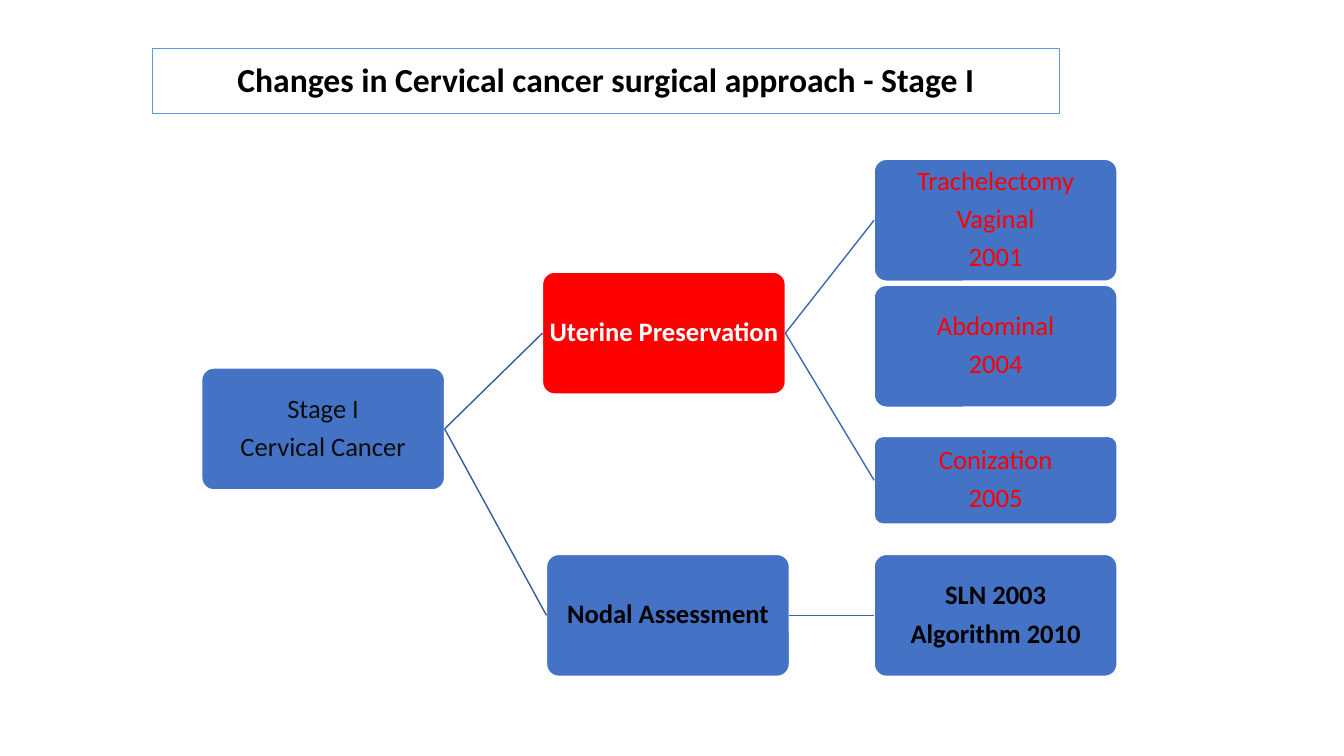
import pptx
import pptx.util
import pptx.dml.color
import pptx.enum.shapes
import pptx.enum.text
import pptx.oxml.ns
from lxml import etree
from pptx.util import Inches

BLUE, RED, WHITE, BLACK = "4472C4", "FF0000", "FFFFFF", "000000"


def color(value):
    return pptx.dml.color.RGBColor.from_string(value)


def write(frame, text, size=19, ink=BLACK, bold=False, after=0):
    """Fill a text frame with one centred paragraph per line of text."""
    frame.word_wrap = True
    frame.vertical_anchor = pptx.enum.text.MSO_ANCHOR.MIDDLE
    for index, line in enumerate(text.split("\n")):
        paragraph = frame.add_paragraph() if index else frame.paragraphs[0]
        paragraph.alignment = pptx.enum.text.PP_ALIGN.CENTER
        paragraph.line_spacing = 0.9
        paragraph.space_before = pptx.util.Pt(0)
        paragraph.space_after = pptx.util.Pt(after)
        run = paragraph.add_run()
        run.text = line
        run.font.name = "Calibri"
        run.font.size = pptx.util.Pt(size)
        run.font.bold = bold
        run.font.color.rgb = color(ink)


class TreeSlide:
    box_width = 2.41
    box_height = 1.21

    def __init__(self, deck):
        self.slide = deck.slides.add_slide(deck.slide_layouts[5])
        self.shapes = self.slide.shapes

    def outline(self, shape, ink, width):
        shape.line.color.rgb = color(ink)
        shape.line.width = pptx.util.Pt(width)

    def title(self, text, left, top, width, height):
        heading = self.shapes.title
        heading.left, heading.top = Inches(left), Inches(top)
        heading.width, heading.height = Inches(width), Inches(height)
        self.outline(heading, "5B9BD5", 0.75)
        write(heading.text_frame, text, size=24, bold=True)

    def box(self, text, left, top, height=box_height, fill=BLUE, **style):
        node = self.shapes.add_shape(
            pptx.enum.shapes.MSO_SHAPE.ROUNDED_RECTANGLE,
            Inches(left), Inches(top), Inches(self.box_width), Inches(height))
        node.adjustments[0] = 0.1
        node.shadow.inherit = False
        node.fill.solid()
        node.fill.fore_color.rgb = color(fill)
        self.outline(node, WHITE, 1)
        frame = node.text_frame
        frame.margin_left = frame.margin_right = Inches(0.01)
        frame.margin_top = frame.margin_bottom = Inches(0.01)
        write(frame, text, after=6.65, **style)
        return node

    def branch(self, parent, child, ink):
        link = self.shapes.add_connector(
            pptx.enum.shapes.MSO_CONNECTOR.STRAIGHT, 0, 0, 0, 0)
        link.begin_connect(parent, 3)
        link.end_connect(child, 1)
        self.outline(link, ink, 1)
        etree.SubElement(link._element.spPr, pptx.oxml.ns.qn("a:effectLst"))


def main():
    deck = pptx.Presentation()
    deck.slide_width, deck.slide_height = Inches(13.33), Inches(7.5)
    tree = TreeSlide(deck)
    tree.title("Changes in Cervical cancer surgical approach - Stage I",
               1.51, 0.48, 9, 0.65)

    # Root and its two branches
    stage = tree.box("Stage I\nCervical Cancer", 2, 3.65, ink="0D0D0D")
    uterine = tree.box("Uterine Preservation", 5.38, 2.7,
                       fill=RED, ink=WHITE, bold=True)
    nodal = tree.box("Nodal Assessment", 5.42, 5.5, bold=True)

    # Procedures in the right column
    column = 8.67
    trachelectomy = tree.box("Trachelectomy\nVaginal\n2001", column, 1.58, ink=RED)
    tree.box("Abdominal\n2004", column, 2.83, ink=RED)
    conization = tree.box("Conization\n2005", column, 4.33, height=0.87, ink=RED)
    sentinel = tree.box("SLN 2003\nAlgorithm 2010", column, 5.5, bold=True)

    # Links from parent to child
    for child in (uterine, nodal):
        tree.branch(stage, child, "365B9D")
    for parent, child in ((uterine, trachelectomy), (uterine, conization),
                          (nodal, sentinel)):
        tree.branch(parent, child, "3E67B2")

    deck.save("out.pptx")


if __name__ == "__main__":
    main()
